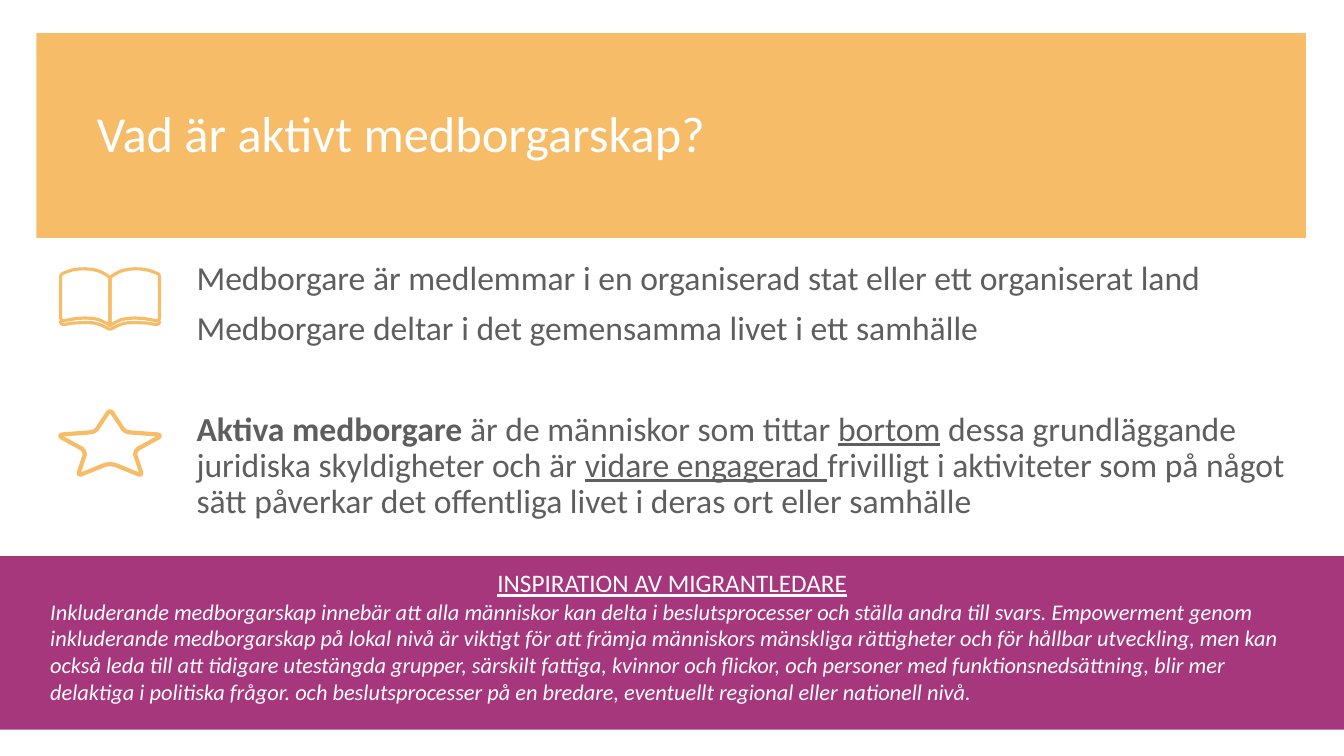
from lxml import etree
from pptx import Presentation
from pptx.dml.color import RGBColor
from pptx.enum.shapes import MSO_SHAPE
from pptx.enum.text import MSO_ANCHOR, MSO_AUTO_SIZE, PP_ALIGN
from pptx.oxml.ns import qn
from pptx.util import Pt

COLORS = {"orange": "F6BC67", "purple": "A6377D", "gray": "5E5E5E", "white": "FFFFFF"}
ICON_CENTER = 78.6

# Outlines as (distance from the icon's vertical axis, y)
BOOK_COVER = [
    (35.3, 229), (35.3, 230.4), (34.6, 231.5), (32.4, 231.8), (26.6, 230.8), (18, 230.4),
    (12.2, 230.6), (8, 231.6), (5, 232.8), (2, 234.4), (0, 235.4)]
BOOK_PAGE = [
    (0, 198.7), (0, 232.6), (3.6, 230.4), (7.9, 228.4), (12.2, 227.5), (18, 227.2),
    (24.5, 227.6), (32.4, 229), (34.5, 229), (35.3, 227.5), (35.3, 197.3), (34.6, 195.8),
    (32, 194.6), (27.4, 193), (22.3, 192.2), (18, 192), (13, 192.4), (9.4, 193.2),
    (7, 194), (3.6, 195.8), (1.4, 197.2)]
STAR_HALF = [
    (0, 293.8), (1.4, 294.5), (9.4, 306.7), (11.5, 308.2), (14.4, 308.9), (33.8, 310.3),
    (35.4, 310.8), (35.5, 311.6), (34.6, 312.5), (20.2, 320.4), (18.4, 322.4),
    (18, 324.7), (22.3, 337.7), (22, 339), (20.5, 338.9), (3.6, 332), (0, 331.5)]

presentation = Presentation()
presentation.slide_width, presentation.slide_height = Pt(960), Pt(540)
slide = presentation.slides.add_slide(presentation.slide_layouts[1])
shapes = slide.shapes


def color(name):
    return RGBColor.from_string(COLORS[name])


def draw_outline(points, width, close):
    vertices = [(Pt(ICON_CENTER + x), Pt(y)) for x, y in points]
    builder = shapes.build_freeform(*vertices[0])
    builder.add_line_segments(vertices[1:], close=close)
    shape = builder.convert_to_shape()
    shape.shadow.inherit = False
    shape.fill.background()
    shape.line.color.rgb = color("orange")
    shape.line.width = Pt(width)


# Colour bands, the title band behind the placeholders
bands = {}
for name, left, top, width, height in [
        ("orange", 26, 23.6, 906.8, 146.4), ("purple", 0, 397.2, 960, 124)]:
    band = shapes.add_shape(MSO_SHAPE.RECTANGLE, Pt(left), Pt(top), Pt(width), Pt(height))
    band.shadow.inherit = False
    band.fill.solid()
    band.fill.fore_color.rgb = color(name)
    band.line.fill.background()
    bands[name] = band
title, body = shapes.title, slide.placeholders[1]
title._element.addprevious(bands["orange"]._element)

# Text: each paragraph is a list of (text, style) runs
inspiration = shapes.add_textbox(Pt(28.8), Pt(391), Pt(902.9), Pt(117.4))
texts = [
    (title, (61.9, 74.2, 831.6, 54.7), 36, "white", [
        [("Vad är aktivt medborgarskap?", None)]]),
    (body, (133.2, 182.9, 812.2, 201.6), 24, "gray", [
        [("Medborgare är medlemmar i en organiserad stat eller ett organiserat land", None)],
        [("Medborgare deltar i det gemensamma livet i ett samhälle", None)],
        [("Aktiva medborgare ", "bold"),
         ("är de människor som tittar ", None),
         ("bortom", "underline"),
         (" dessa grundläggande juridiska skyldigheter och är ", None),
         ("vidare engagerad ", "underline"),
         ("frivilligt i aktiviteter som på något sätt påverkar det offentliga livet "
          "i deras ort eller samhälle", None)]]),
    (inspiration, (28.8, 391, 902.9, 117.4), 16, "white", [
        [("INSPIRATION AV MIGRANTLEDARE", "underline")],
        [("Inkluderande medborgarskap innebär att alla människor kan delta i beslutsprocesser "
          "och ställa andra till svars. Empowerment genom inkluderande medborgarskap på lokal "
          "nivå är viktigt för att främja människors mänskliga rättigheter och för hållbar "
          "utveckling, men kan också leda till att tidigare utestängda grupper, särskilt "
          "fattiga, kvinnor och flickor, och personer med funktionsnedsättning, blir mer "
          "delaktiga i politiska frågor. och beslutsprocesser på en bredare, eventuellt "
          "regional eller nationell nivå.", "italic")]]),
]
for shape, box, size, color_name, paragraphs in texts:
    shape.left, shape.top, shape.width, shape.height = map(Pt, box)
    frame = shape.text_frame
    frame.word_wrap = True
    frame.auto_size = MSO_AUTO_SIZE.NONE
    frame.vertical_anchor = MSO_ANCHOR.TOP
    for index, runs in enumerate(paragraphs):
        paragraph = frame.add_paragraph() if index else frame.paragraphs[0]
        properties = paragraph._p.get_or_add_pPr()
        properties.set("marL", "0")
        properties.set("indent", "0")
        etree.SubElement(properties, qn("a:buNone"))
        paragraph.alignment = PP_ALIGN.LEFT
        paragraph.line_spacing = 1.0 if shape is inspiration else 0.9
        paragraph.space_before = Pt(0)
        paragraph.font.name = "Calibri"
        paragraph.font.size = Pt(size)
        paragraph.font.color.rgb = color(color_name)
        for text, style in runs:
            run = paragraph.add_run()
            run.text = text
            if style:
                setattr(run.font, style, True)

body.text_frame.paragraphs[1].space_before = Pt(10)
body.text_frame.paragraphs[2].space_before = Pt(46)
heading = inspiration.text_frame.paragraphs[0]
heading.alignment = PP_ALIGN.CENTER
heading.line_spacing = 1.5
heading.font.size = Pt(18)

# Book and star icons, mirrored about their axis
for side in (-1, 1):
    for half, close in [(BOOK_COVER, False), (BOOK_PAGE, True)]:
        draw_outline([(side * x, y) for x, y in half], 2.25, close)
draw_outline(STAR_HALF + [(-x, y) for x, y in STAR_HALF[-2:0:-1]], 3, True)

presentation.save("out.pptx")
